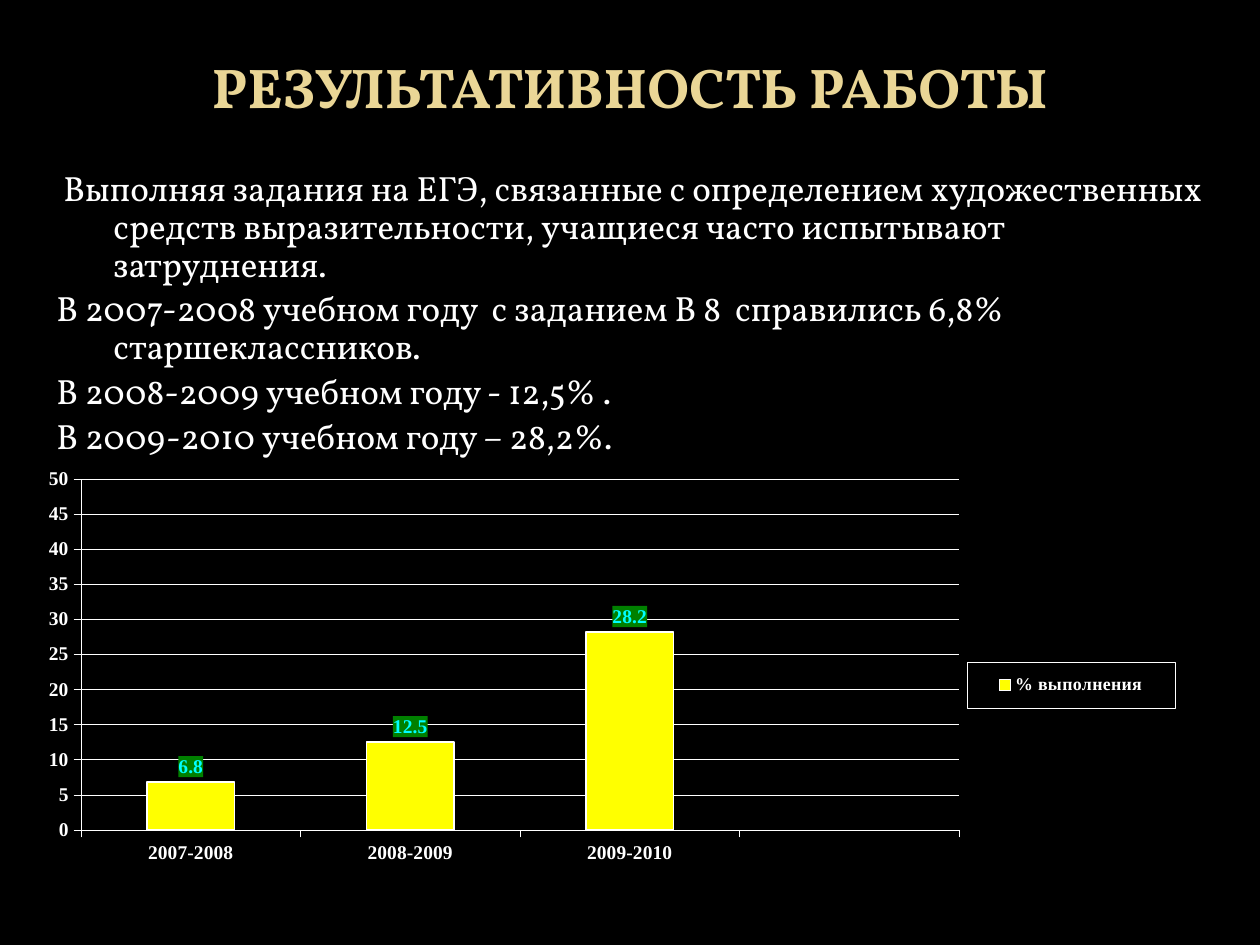
from lxml import etree
from pptx import Presentation
from pptx.chart.data import CategoryChartData
from pptx.dml.color import RGBColor
from pptx.enum.chart import XL_CHART_TYPE, XL_LABEL_POSITION, XL_LEGEND_POSITION, XL_TICK_MARK
from pptx.enum.text import MSO_ANCHOR, PP_ALIGN
from pptx.oxml.ns import qn
from pptx.util import Emu, Pt

COLUMNS = XL_CHART_TYPE.COLUMN_CLUSTERED
ABOVE_BAR = XL_LABEL_POSITION.OUTSIDE_END
RIGHT = XL_LEGEND_POSITION.RIGHT
OUTSIDE, NO_TICK = XL_TICK_MARK.OUTSIDE, XL_TICK_MARK.NONE
MIDDLE, CENTER = MSO_ANCHOR.MIDDLE, PP_ALIGN.CENTER

# Content
TITLE = "РЕЗУЛЬТАТИВНОСТЬ РАБОТЫ"
RESULTS = [
    " Выполняя задания на ЕГЭ, связанные с определением художественных "
    "средств выразительности, учащиеся часто испытывают затруднения.",
    "В 2007-2008 учебном году  с заданием В 8  справились 6,8% старшеклассников.",
    "В 2008-2009 учебном году - 12,5% .",
    "В 2009-2010 учебном году – 28,2%.",
]
SERIES_NAME = "% выполнения"
SCORES = [("2007-2008", 6.8), ("2008-2009", 12.5), ("2009-2010", 28.2), ("", None)]

THEME = {
    "background": "000000", "title": "EAD696", "text": "FFFFFF", "bar": "FFFF00",
    "label": "00FFFF", "label_back": "008000",
    "text_font": "Vollkorn", "chart_font": "Times New Roman",
    "title_size": 32, "text_size": 20, "chart_size": 11.1, "legend_size": 10.2,
    "grid_width": 0.2, "bar_width": 0.79,
}

# Places in px: left, top, width, height
SLIDE_SIZE = (1260, 945)
TITLE_BOX = (63, 38, 1134, 97)
RESULTS_BOX = (25, 165, 1211, 301)
CHART_BOX = (35, 462, 1201, 436)
PLOT_BOX = (81, 479, 878, 351)
LEGEND_BOX = (967, 662, 208, 46)
HANGING_INDENT, FIRST_LINE = 76, -57


def px(value):
    return Emu(value * 914400 // 126)


def color(name):
    return RGBColor.from_string(THEME[name])


def style_font(font, face, size, tint, bold):
    font.name, font.size, font.bold = THEME[face], Pt(THEME[size]), bold
    font.color.rgb = color(tint)


def style_line(line, width="grid_width"):
    line.color.rgb = color("text")
    line.width = Pt(THEME[width])


def add_text(slide, box, paragraphs, size, tint, bold):
    frame = slide.shapes.add_textbox(*map(px, box)).text_frame
    frame.word_wrap = True
    frame.text = "\n".join(paragraphs)
    for paragraph in frame.paragraphs:
        style_font(paragraph.runs[0].font, "text_font", size, tint, bold)
    return frame


def manual_layout(box, inner=False):
    """Chart layout for a box, as fractions of the chart area."""
    layout = etree.Element(qn("c:layout"))
    manual = etree.SubElement(layout, qn("c:manualLayout"))
    left, top, width, height = CHART_BOX
    entries = [("layoutTarget", "inner")] if inner else []
    entries += [("xMode", "edge"), ("yMode", "edge"),
                ("x", (box[0] - left) / width), ("y", (box[1] - top) / height),
                ("w", box[2] / width), ("h", box[3] / height)]
    for tag, value in entries:
        text = value if isinstance(value, str) else f"{value:.4f}"
        etree.SubElement(manual, qn(f"c:{tag}")).set("val", text)
    return layout


def add_box_style(element, fill=None, line=None):
    """Give a legend or data labels a filled or outlined box."""
    style = etree.Element(qn("c:spPr"))
    parent = style
    if line:
        parent = etree.SubElement(style, qn("a:ln"), w=str(Pt(THEME["grid_width"])))
    solid = etree.SubElement(parent, qn("a:solidFill"))
    etree.SubElement(solid, qn("a:srgbClr"), val=THEME[fill or line])
    element.find(qn("c:txPr")).addprevious(style)


presentation = Presentation()
presentation.slide_width, presentation.slide_height = map(px, SLIDE_SIZE)
slide = presentation.slides.add_slide(presentation.slide_layouts[6])
slide.background.fill.solid()
slide.background.fill.fore_color.rgb = color("background")

# Title
title = add_text(slide, TITLE_BOX, [TITLE], "title_size", "title", True)
title.vertical_anchor = MIDDLE
title.paragraphs[0].alignment = CENTER

# Results by year
results = add_text(slide, RESULTS_BOX, RESULTS, "text_size", "text", False)
for paragraph in results.paragraphs:
    paragraph.line_spacing = 0.9
    paragraph.space_before = Pt(4)
    properties = paragraph._p.get_or_add_pPr()
    properties.set("marL", str(px(HANGING_INDENT)))
    properties.set("indent", str(px(FIRST_LINE)))

# Chart
scores = CategoryChartData()
scores.categories = [year for year, _ in SCORES]
scores.add_series(SERIES_NAME, [score for _, score in SCORES])
chart = slide.shapes.add_chart(COLUMNS, *map(px, CHART_BOX), scores).chart
chart.has_title = False
style_font(chart.font, "chart_font", "chart_size", "text", True)
plot_area = chart._chartSpace.chart.plotArea
for old_layout in plot_area.findall(qn("c:layout")):
    plot_area.remove(old_layout)
plot_area.insert(0, manual_layout(PLOT_BOX, inner=True))

# Axes
for axis in (chart.category_axis, chart.value_axis):
    axis.major_tick_mark, axis.minor_tick_mark = OUTSIDE, NO_TICK
    style_font(axis.tick_labels.font, "chart_font", "chart_size", "text", True)
    style_line(axis.format.line)
value_axis = chart.value_axis
value_axis.minimum_scale, value_axis.maximum_scale, value_axis.major_unit = 0, 50, 5
value_axis.has_major_gridlines = True
style_line(value_axis.major_gridlines.format.line)

# Bars and their labels
plot = chart.plots[0]
plot.gap_width = 150
plot.vary_by_categories = False
bars = plot.series[0]
bars.format.fill.solid()
bars.format.fill.fore_color.rgb = color("bar")
style_line(bars.format.line, "bar_width")
labels = bars.data_labels
labels.show_value = True
labels.position = ABOVE_BAR
style_font(labels.font, "chart_font", "chart_size", "label", True)
add_box_style(labels._element, fill="label_back")

# Legend
chart.has_legend = True
legend = chart.legend
legend.position = RIGHT
legend.include_in_layout = False
style_font(legend.font, "chart_font", "legend_size", "text", True)
for old_layout in legend._element.findall(qn("c:layout")):
    legend._element.remove(old_layout)
legend._element.find(qn("c:legendPos")).addnext(manual_layout(LEGEND_BOX))
add_box_style(legend._element, line="text")

presentation.save("out.pptx")
